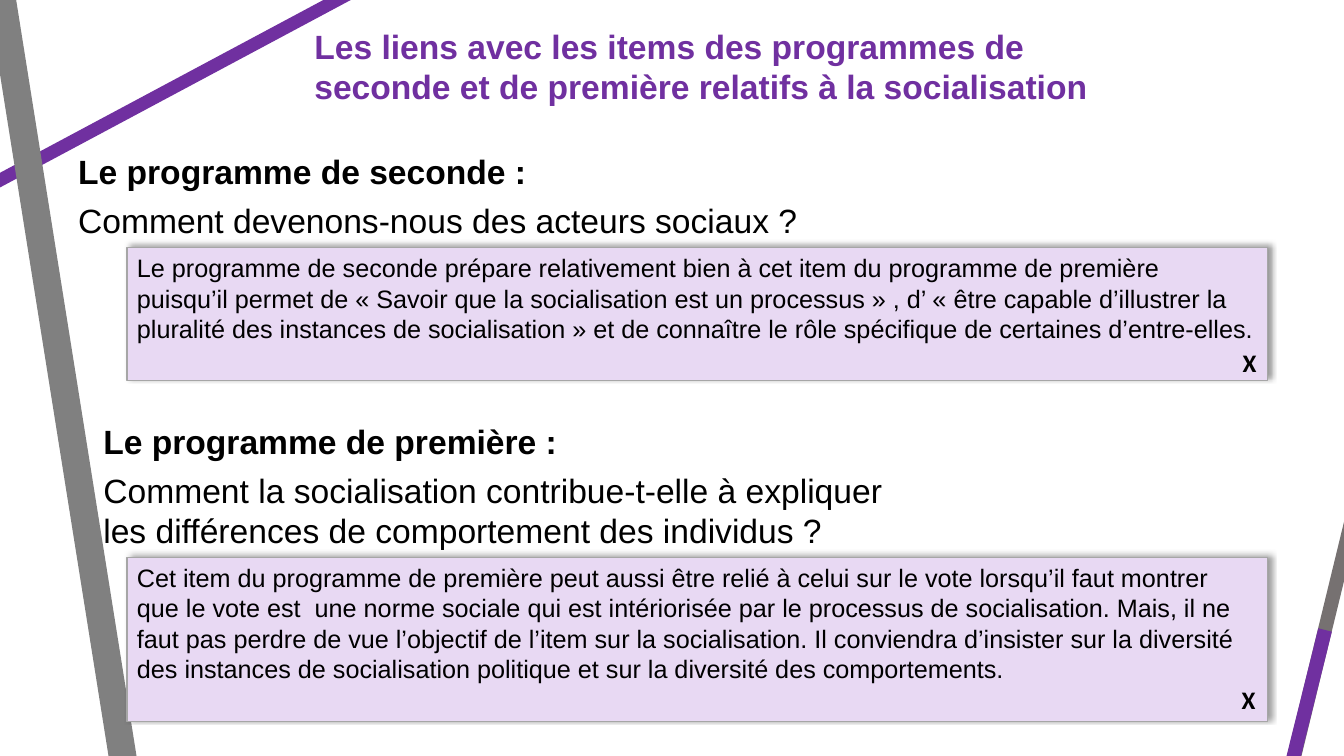
from lxml.etree import SubElement
from pptx import Presentation
from pptx.dml.color import RGBColor
from pptx.enum.shapes import MSO_CONNECTOR, MSO_SHAPE
from pptx.enum.text import MSO_ANCHOR
from pptx.oxml.ns import qn
from pptx.util import Pt


def px(num):
    return num * 9525


def tint(code):
    return RGBColor.from_string(code)


def apply(item, form):
    for key, val in form.items():
        setattr(item, key, val)


class Page:
    violet = "7030A0"
    black = "000000"
    frame = {"word_wrap": True, "vertical_anchor": MSO_ANCHOR.TOP}
    head = {"name": "Arial", "size": Pt(24), "bold": True}
    lead = {"name": "Arial", "size": Pt(24), "bold": False}
    body = {"name": "Arial", "size": Pt(18), "bold": False}
    mark = {"name": "Calibri", "size": Pt(18), "bold": True}

    def __init__(self, deck):
        self.slide = deck.slides.add_slide(deck.slide_layouts[6])
        self.shapes = self.slide.shapes

    def line(self, start, end, color, width):
        line = self.shapes.add_connector(
            MSO_CONNECTOR.STRAIGHT, *map(px, start + end))
        line.line.color.rgb = tint(color)
        line.line.width = Pt(width)
        SubElement(line._element.spPr, qn("a:effectLst"))

    def fill_text(self, shape, parts, color=black, gap=0, indent=0):
        frame = shape.text_frame
        apply(frame, self.frame)
        for spot, (text, form) in enumerate(parts):
            para = frame.add_paragraph() if spot else frame.paragraphs[0]
            apply(para, {"space_before": Pt(gap)})
            para._p.get_or_add_pPr().set("marL", str(px(indent)))
            para._p.get_or_add_pPr().set("algn", "l")
            run = para.add_run()
            run.text = text
            apply(run.font, form)
            run.font.color.rgb = tint(color)

    def text(self, area, parts, **style):
        box = self.shapes.add_textbox(*map(px, area))
        self.fill_text(box, parts, **style)

    def topic(self, area, title, ask):
        self.text(area, [(title, self.head), (ask, self.lead)],
                  gap=6, indent=28)

    def panel(self, area, text):
        box = self.shapes.add_shape(MSO_SHAPE.RECTANGLE, *map(px, area))
        box.fill.solid()
        box.fill.fore_color.rgb = tint("E8D9F3")
        box.line.color.rgb = tint("A6A6A6")
        box.line.width = Pt(0.75)
        self.shade(box)
        self.fill_text(box, [(text, self.body)])

    def shade(self, box):
        box.shadow.inherit = False
        glow = SubElement(
            box._element.spPr.find(qn("a:effectLst")), qn("a:outerShdw"),
            blurRad=str(Pt(4)), dist=str(Pt(3)), dir=str(315 * 60000),
            algn="bl", rotWithShape="0")
        color = SubElement(glow, qn("a:srgbClr"), val=self.black)
        SubElement(color, qn("a:alpha"), val="40000")


def main():
    deck = Presentation()
    apply(deck, {"slide_width": px(1280), "slide_height": px(720)})
    page = Page(deck)

    page.line((-201, 279), (495, -93), page.violet, 9.25)
    page.line((0, -13), (121, 747), "808080", 19.75)
    page.line((1177, 949), (1310, 402), "767171", 10)
    page.line((1169, 974), (1262, 600), page.violet, 10)

    page.topic((37, 139, 838, 95), "Le programme de seconde :",
               "Comment devenons-nous des acteurs sociaux ?")
    page.panel(
        (121, 236, 1086, 126),
        "Le programme de seconde prépare relativement bien à cet item du "
        "programme de première puisqu’il permet de « Savoir que la "
        "socialisation est un processus » , d’ « être capable d’illustrer "
        "la pluralité des instances de socialisation » et de connaître le "
        "rôle spécifique de certaines d’entre-elles.")
    page.text((1174, 326, 33, 38), [("X", page.mark)])

    page.text(
        (290, 20, 780, 87),
        [("Les liens avec les items des programmes de seconde et de "
          "première relatifs à la socialisation", page.head)],
        color=page.violet, gap=6)

    page.topic((61, 396, 838, 134), "Le programme de première :",
               "Comment la socialisation contribue-t-elle à expliquer les "
               "différences de comportement des individus ?")
    page.panel(
        (121, 531, 1086, 156),
        "Cet item du programme de première peut aussi être relié à celui "
        "sur le vote lorsqu’il faut montrer que le vote est  une norme "
        "sociale qui est intériorisée par le processus de socialisation. "
        "Mais, il ne faut pas perdre de vue l’objectif de l’item sur la "
        "socialisation. Il conviendra d’insister sur la diversité des "
        "instances de socialisation politique et sur la diversité des "
        "comportements.")
    page.text((1173, 647, 33, 38), [("X", page.mark)])

    deck.save("out.pptx")


if __name__ == "__main__":
    main()
